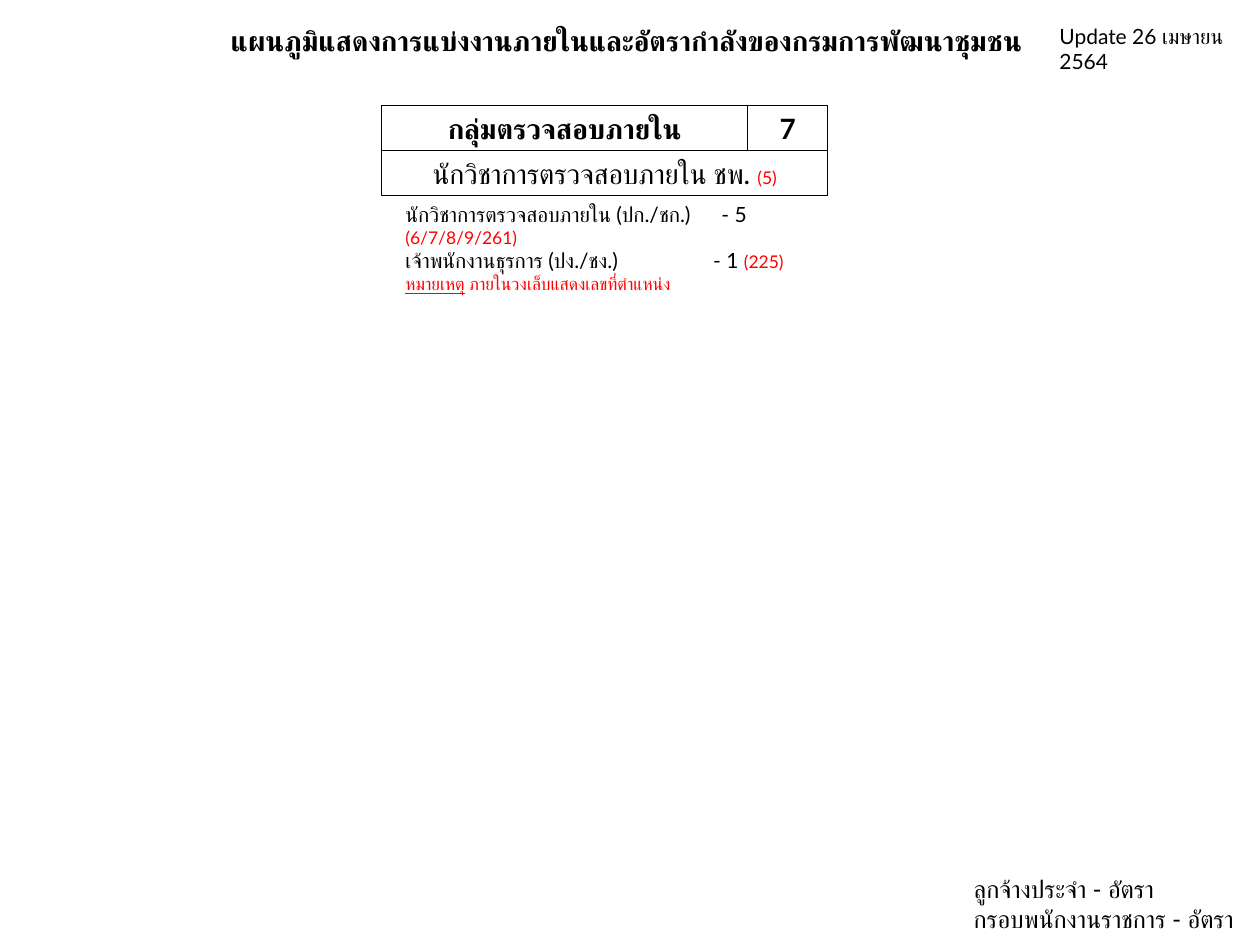
from collections import namedtuple

from lxml.etree import SubElement
from pptx import Presentation
from pptx.dml.color import RGBColor
from pptx.enum.shapes import MSO_SHAPE as Preset
from pptx.enum.text import MSO_ANCHOR as Anchor, PP_ALIGN as Align
from pptx.oxml.ns import qn
from pptx.util import Inches, Pt

WIDTH, HEIGHT = Inches(10), Inches(7.5)
BLACK, RED, WHITE = "000000", "FF0000", "FFFFFF"
Box = namedtuple("Box", "left top width height")


def colour(value):
    return RGBColor.from_string(value)


def percent(left, top, width, height):
    return Box(
        int(WIDTH * left / 100),
        int(HEIGHT * top / 100),
        int(WIDTH * width / 100),
        int(HEIGHT * height / 100),
    )


def style(size, ink=BLACK, **extra):
    return {"name": "Lato", "size": Pt(size), "ink": ink, **extra}


BODY, ENTRY, NUMBER = style(16), style(12), style(10, RED)
HEADING = style(16, bold=True)
FOOTER = style(14)


def apply_format(target, values):
    for key, value in values.items():
        if key == "ink":
            target.color.rgb = colour(value)
        else:
            setattr(target, key, value)


def write(frame, lines, align=Align.LEFT, anchor=Anchor.TOP):
    apply_format(frame, {"word_wrap": True, "vertical_anchor": anchor})
    for index, pieces in enumerate(lines):
        line = frame.paragraphs[0] if index == 0 else frame.add_paragraph()
        line.alignment = align
        for wording, values in pieces:
            run = line.add_run()
            run.text = wording
            apply_format(run.font, values)


def add_text(slide, box, lines, **layout):
    frame = slide.shapes.add_textbox(*box).text_frame
    write(frame, lines, **layout)
    return frame


def add_cell(group, box, pieces):
    cell = group.shapes.add_shape(Preset.RECTANGLE, *box)
    cell.shadow.inherit = False
    cell.fill.solid()
    cell.fill.fore_color.rgb = colour(WHITE)
    cell.line.color.rgb = colour(BLACK)
    cell.line.width = Pt(0.75)
    write(cell.text_frame, [pieces], Align.CENTER, Anchor.MIDDLE)


def add_unit(slide, box):
    group = slide.shapes.add_group_shape()
    row = box.height // 2
    name_width = int(box.width * 0.82)
    add_cell(group, Box(box.left, box.top, name_width, row),
             [("กลุ่มตรวจสอบภายใน", HEADING)])
    add_cell(group, Box(box.left + name_width, box.top, box.width - name_width, row),
             [("7", HEADING)])
    add_cell(group, Box(box.left, box.top + row, box.width, row),
             [("นักวิชาการตรวจสอบภายใน ชพ. ", BODY), ("(5)", NUMBER)])


def add_positions(slide, box):
    frame = add_text(slide, box, [
        [("นักวิชาการตรวจสอบภายใน (ปก./ชก.)\t- 5 ", ENTRY), ("(6/7/8/9/261)", NUMBER)],
        [("เจ้าพนักงานธุรการ (ปง./ชง.)\t- 1 ", ENTRY), ("(225)", NUMBER)],
        [("หมายเหตุ", {**NUMBER, "underline": True}),
         (" ภายในวงเล็บแสดงเลขที่ตำแหน่ง", NUMBER)],
    ])
    for line, share in zip(frame.paragraphs, (0.76, 0.74)):
        stops = SubElement(line._p.get_or_add_pPr(), qn("a:tabLst"))
        SubElement(stops, qn("a:tab"), pos=str(int(box.width * share)), algn="l")


def add_title(slide, box):
    add_text(slide, box,
             [[("แผนภูมิแสดงการแบ่งงานภายในและอัตรากำลังของกรมการพัฒนาชุมชน", HEADING)]],
             align=Align.CENTER, anchor=Anchor.MIDDLE)


def add_update(slide, box):
    add_text(slide, box, [[("Update 26 เมษายน 2564", ENTRY)]])


def add_staff_totals(slide, box):
    add_text(slide, box, [
        [("ลูกจ้างประจำ - อัตรา", FOOTER)],
        [("กรอบพนักงานราชการ - อัตรา", FOOTER)],
    ])


def main():
    deck = Presentation()
    deck.slide_width, deck.slide_height = WIDTH, HEIGHT
    slide = deck.slides.add_slide(deck.slide_layouts[6])
    add_positions(slide, percent(31.2, 20.67, 33, 19.6))
    add_title(slide, percent(5.1, 1.6, 89.2, 5.33))
    add_unit(slide, percent(30.3, 11.2, 35.4, 9.47))
    add_staff_totals(slide, percent(76.3, 91.87, 23.6, 8.53))
    add_update(slide, percent(83.1, 1.87, 15, 4))
    deck.save("out.pptx")


if __name__ == "__main__":
    main()
